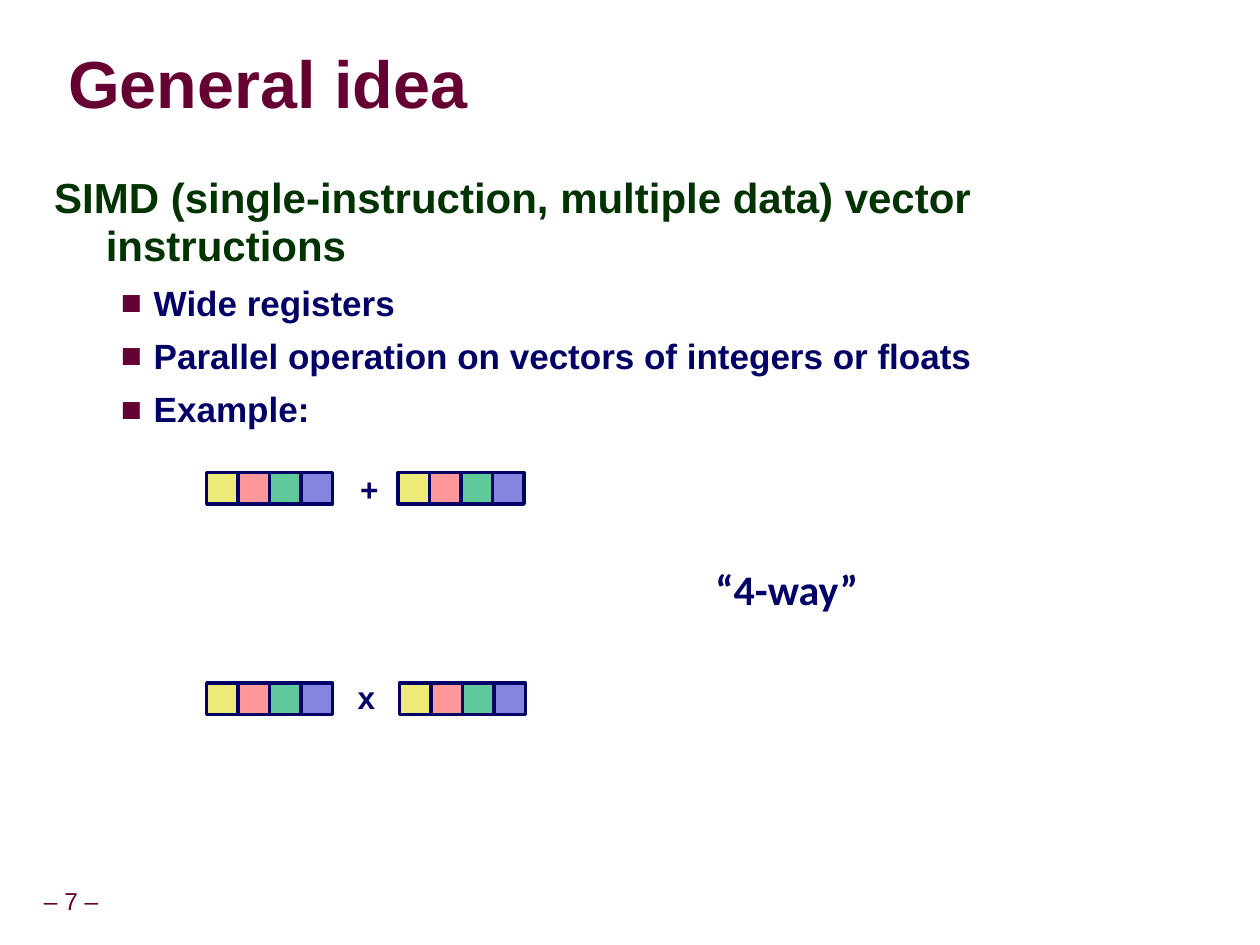
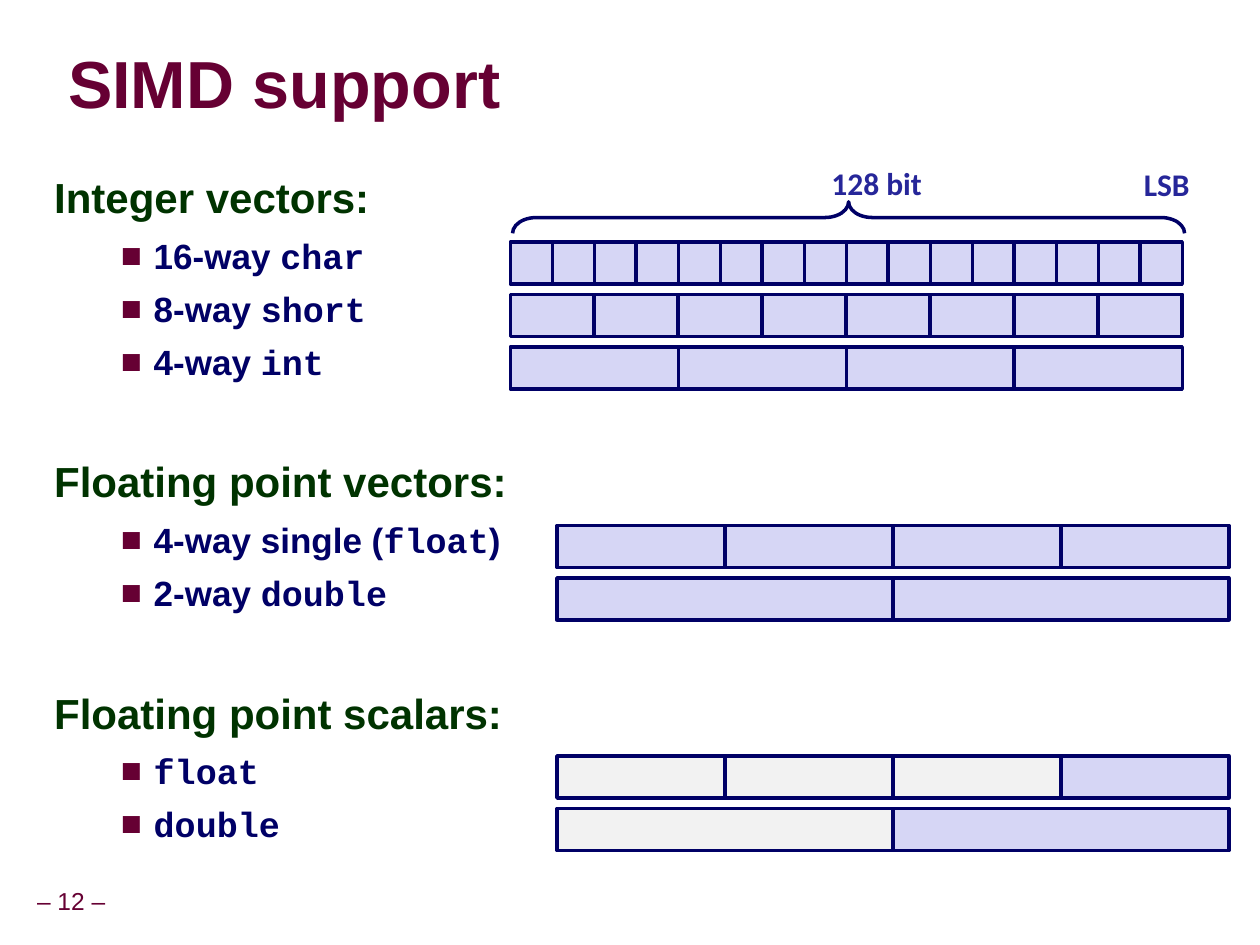
from lxml import etree
from pptx import Presentation
from pptx.dml.color import RGBColor
from pptx.enum.shapes import MSO_SHAPE
from pptx.enum.text import MSO_ANCHOR, MSO_AUTO_SIZE, PP_ALIGN
from pptx.oxml.ns import qn
from pptx.util import Inches, Pt

RECTANGLE, BRACE = MSO_SHAPE.RECTANGLE, MSO_SHAPE.LEFT_BRACE
TOP, MIDDLE = MSO_ANCHOR.TOP, MSO_ANCHOR.MIDDLE
LEFT, CENTER = PP_ALIGN.LEFT, PP_ALIGN.CENTER
FIXED, GROW = MSO_AUTO_SIZE.NONE, MSO_AUTO_SIZE.SHAPE_TO_FIT_TEXT

# Shared style
MAROON, GREEN, NAVY, BLUE = "660033", "003300", "000066", "262699"
USED, UNUSED = "D6D6F5", "F2F2F2"
LANES = ["EDEA77", "FF9999", "60C99C", "8585E0"]
SANS, LABEL, CODE = "Arial", "Calibri", "Courier New"

# Vector register layout
REGISTER_WIDTH = 16 / 3
REGISTER_HEIGHT = 1 / 3
REGISTER_PITCH = 5 / 12
LANE_SIZE = 0.25


def rgb(color):
    return RGBColor.from_string(color)


class Deck:
    def __init__(self):
        self.prs = Presentation()
        self.prs.slide_width = Inches(10)
        self.prs.slide_height = Inches(7.5)
        self.slide = None

    def place(self, shape, left, top, width, height):
        shape.left, shape.top = Inches(left), Inches(top)
        shape.width, shape.height = Inches(width), Inches(height)

    def run(self, paragraph, text, size, color, font=SANS, bold=True):
        run = paragraph.add_run()
        run.text = text
        run.font.size, run.font.name, run.font.bold = Pt(size), font, bold
        run.font.color.rgb = rgb(color)

    def new_slide(self, title, number):
        self.slide = self.prs.slides.add_slide(self.prs.slide_layouts[1])
        heading = self.slide.shapes.title
        self.place(heading, 0.44, 0.27, 9.53, 0.85)
        frame = heading.text_frame
        frame.vertical_anchor, frame.auto_size = MIDDLE, FIXED
        paragraph = frame.paragraphs[0]
        paragraph.alignment, paragraph.line_spacing = LEFT, 0.87
        self.run(paragraph, title, 38, MAROON)
        self.page_number(number)

    def page_number(self, number):
        footer = self.label(f"– {number} –", -0.09, 6.99, 1.31, 0.34,
                            size=14, color=MAROON, bold=False)
        frame = footer.text_frame
        frame.vertical_anchor = MIDDLE
        frame.margin_left = frame.margin_right = Inches(0.05)
        frame.paragraphs[0].alignment = CENTER
        frame.paragraphs[0].line_spacing = 0.9

    def label(self, text, left, top, width, height=0.4,
              size=18, color=NAVY, font=SANS, bold=True):
        box = self.slide.shapes.add_textbox(
            Inches(left), Inches(top), Inches(width), Inches(height))
        frame = box.text_frame
        frame.word_wrap, frame.auto_size = False, GROW
        self.run(frame.paragraphs[0], text, size, color, font, bold)
        return box

    def outline(self, sections):
        """Each section is a heading and its items; an item is a list of (text, font)."""
        body = self.slide.placeholders[1]
        self.place(body, 0.32, 1.34, 9.08, 5.71)
        frame = body.text_frame
        frame.vertical_anchor, frame.auto_size = TOP, FIXED
        for i, (heading, items) in enumerate(sections):
            paragraph = frame.add_paragraph() if i else frame.paragraphs[0]
            paragraph.line_spacing = 0.95
            paragraph.space_before = Pt(44.2 if i else 15)
            self.indent(paragraph, 0.42, -0.41)
            self.run(paragraph, heading, 24, GREEN)
            for item in items:
                paragraph = frame.add_paragraph()
                paragraph.level = 1
                paragraph.line_spacing, paragraph.space_before = Pt(24.1), Pt(6.2)
                self.indent(paragraph, 0.8, -0.26, "■")
                for text, font in item:
                    self.run(paragraph, text, 20, NAVY, font)

    def indent(self, paragraph, margin, first, bullet=None):
        props = paragraph._p.get_or_add_pPr()
        props.set("marL", str(Inches(margin)))
        props.set("indent", str(Inches(first)))
        if bullet is None:
            etree.SubElement(props, qn("a:buNone"))
            return
        color = etree.SubElement(props, qn("a:buClr"))
        etree.SubElement(color, qn("a:srgbClr"), val=MAROON)
        etree.SubElement(props, qn("a:buFont"), typeface=SANS)
        etree.SubElement(props, qn("a:buChar"), char=bullet)

    def shape(self, kind, left, top, width, height, fill=None):
        shape = self.slide.shapes.add_shape(
            kind, Inches(left), Inches(top), Inches(width), Inches(height))
        shape.shadow.inherit = False
        if fill:
            shape.fill.solid()
            shape.fill.fore_color.rgb = rgb(fill)
        else:
            shape.fill.background()
        shape.line.color.rgb = rgb(NAVY)
        shape.line.width = Pt(2)
        return shape

    def cells(self, left, top, width, height, fills):
        """A row of touching cells, one for each fill."""
        step = width / len(fills)
        for i, fill in enumerate(fills):
            self.shape(RECTANGLE, left + i * step, top, step, height, fill)

    def registers(self, left, top, rows):
        for i, fills in enumerate(rows):
            self.cells(left, top + i * REGISTER_PITCH,
                       REGISTER_WIDTH, REGISTER_HEIGHT, fills)


def general_idea(deck):
    deck.new_slide("General idea", 7)
    deck.outline([
        ("SIMD (single-instruction, multiple data) vector instructions", [
            [("Wide registers", SANS)],
            [("Parallel operation on vectors of integers or floats", SANS)],
            [("Example:", SANS)],
        ]),
    ])
    # Lane-wise addition and multiplication
    operations = [("+", 2.76, 3.68, 3.75, 3.16), ("x", 2.74, 5.33, 5.42, 3.17)]
    for sign, sign_left, sign_top, lanes_top, second_left in operations:
        for left in (1.64, second_left):
            deck.cells(left, lanes_top, len(LANES) * LANE_SIZE, LANE_SIZE, LANES)
        deck.label(sign, sign_left, sign_top, 0.34)
    deck.label("“4-way”", 5.58, 4.42, 1.74, 0.5, size=24, font=LABEL)


def simd_support(deck):
    deck.new_slide("SIMD support", 12)
    deck.outline([
        ("Integer vectors:", [
            [("16-way ", SANS), ("char", CODE)],
            [("8-way ", SANS), ("short", CODE)],
            [("4-way ", SANS), ("int", CODE)],
        ]),
        ("Floating point vectors:", [
            [("4-way single (", SANS), ("float", CODE), (")", SANS)],
            [("2-way ", SANS), ("double", CODE)],
        ]),
        ("Floating point scalars:", [
            [("float", CODE)],
            [("double", CODE)],
        ]),
    ])
    # Registers: integer vectors, floating point vectors, scalars
    deck.registers(4.05, 1.92, [[USED] * ways for ways in (16, 8, 4)])
    deck.registers(4.42, 4.17, [[USED] * ways for ways in (4, 2)])
    deck.registers(4.42, 6, [[UNUSED] * (ways - 1) + [USED] for ways in (4, 2)])
    # Register width
    width_brace = deck.shape(BRACE, 6.61, -0.94, 0.25, REGISTER_WIDTH)
    width_brace.rotation = 90
    width_brace.adjustments[0] = 0.75
    deck.label("128 bit", 6.5, 1.25, 1.19, color=BLUE, font=LABEL)
    deck.label("LSB", 8.98, 1.26, 0.73, color=BLUE, font=LABEL)


def main():
    deck = Deck()
    general_idea(deck)
    simd_support(deck)
    deck.prs.save("out.pptx")


if __name__ == "__main__":
    main()
